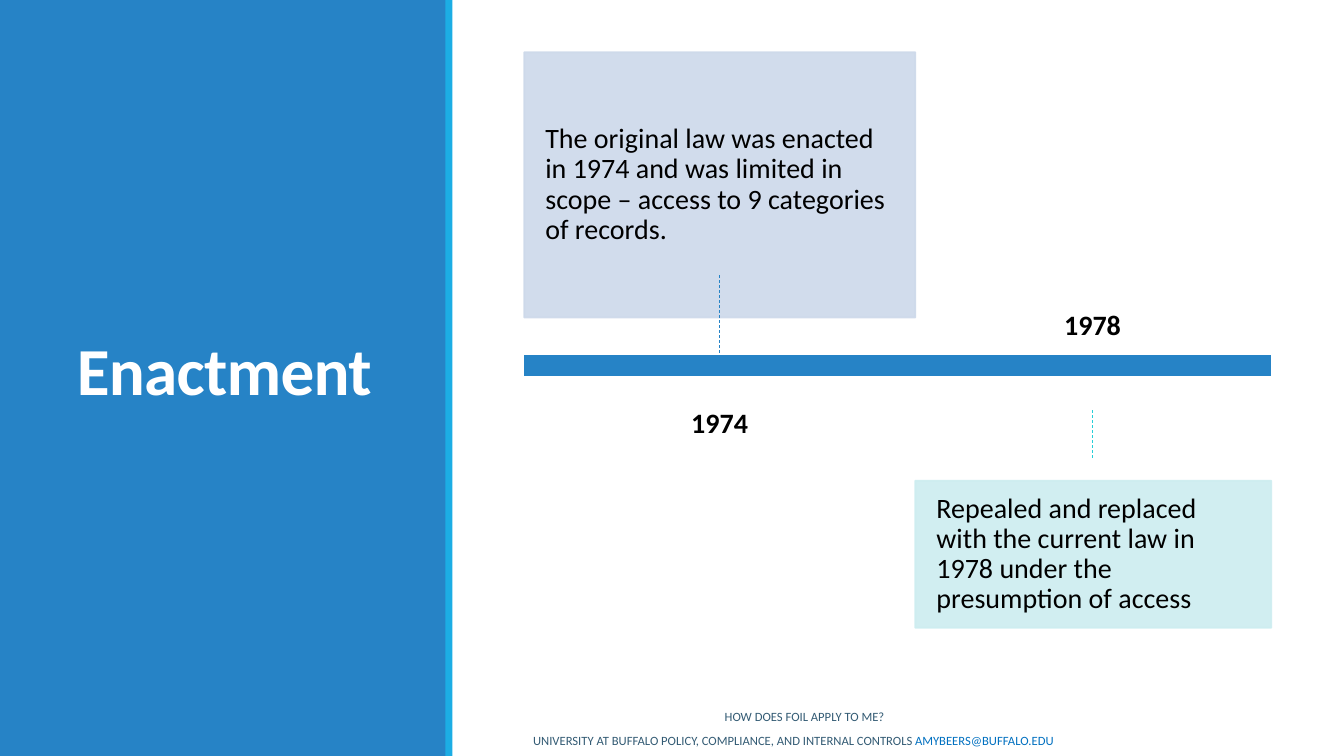
from lxml import etree
from pptx import Presentation
from pptx.dml.color import RGBColor
from pptx.enum.dml import MSO_LINE
from pptx.enum.shapes import MSO_CONNECTOR, MSO_SHAPE
from pptx.enum.text import MSO_ANCHOR, PP_ALIGN
from pptx.oxml.ns import qn
from pptx.util import Pt

RECTANGLE = MSO_SHAPE.RECTANGLE
STRAIGHT = MSO_CONNECTOR.STRAIGHT
DASH = MSO_LINE.DASH
LEFT, CENTER = PP_ALIGN.LEFT, PP_ALIGN.CENTER
TOP, MIDDLE, BOTTOM = MSO_ANCHOR.TOP, MSO_ANCHOR.MIDDLE, MSO_ANCHOR.BOTTOM

WHITE = RGBColor(0xFF, 0xFF, 0xFF)
BLACK = RGBColor(0x00, 0x00, 0x00)
BLUE = RGBColor(0x26, 0x83, 0xC6)
SKY = RGBColor(0x1C, 0xAD, 0xE4)
TURQUOISE = RGBColor(0x27, 0xCE, 0xD7)
PALE_BLUE = RGBColor(0xCD, 0xD9, 0xEA)
PALE_TURQUOISE = RGBColor(0xCD, 0xED, 0xF0)
SLATE = RGBColor(0x33, 0x5B, 0x74)
LINK_BLUE = RGBColor(0x00, 0x70, 0xC0)


class SlideBuilder:
    font_name = "Calibri"
    outline_width = Pt(1.25)
    card_margin = 15.12

    def __init__(self, slide):
        self.slide = slide

    def add_span(self, para, text, size=20, color=BLACK, bold=False, tracking=0):
        """Append a formatted span; tracking is in points."""
        span = para.add_run()
        span.text = text
        span.font.name = self.font_name
        span.font.size = Pt(size)
        span.font.bold = bold
        span.font.color.rgb = color
        if tracking:
            span.font._element.set("spc", str(round(tracking * 100)))

    def frame(self, box, margins, anchor):
        """Prepare the text frame of a box and return it."""
        frame = box.text_frame
        frame.word_wrap = True
        frame.vertical_anchor = anchor
        frame.margin_left = frame.margin_right = Pt(margins[0])
        frame.margin_top = frame.margin_bottom = Pt(margins[1])
        return frame

    def rectangle(self, left, top, width, height, fill, outline=None, opacity=100):
        box = self.slide.shapes.add_shape(
            RECTANGLE, Pt(left), Pt(top), Pt(width), Pt(height))
        box.shadow.inherit = False
        box.fill.solid()
        box.fill.fore_color.rgb = fill
        if outline is None:
            box.line.fill.background()
        else:
            box.line.color.rgb = outline
            box.line.width = self.outline_width
        if opacity < 100:
            for color in box.element.spPr.iter(qn("a:srgbClr")):
                etree.SubElement(color, qn("a:alpha")).set("val", str(opacity * 1000))
        return box

    def text_box(self, left, top, width, height, margins=(7.2, 3.6), anchor=MIDDLE):
        box = self.slide.shapes.add_textbox(
            Pt(left), Pt(top), Pt(width), Pt(height))
        return self.frame(box, margins, anchor)

    def title(self, left, top, width, height, text):
        para = self.text_box(left, top, width, height).paragraphs[0]
        para.alignment = CENTER
        para.line_spacing = 0.85
        self.add_span(para, text, size=48, color=WHITE, bold=True, tracking=-0.5)

    def year(self, left, top, width, height, text, anchor):
        para = self.text_box(left, top, width, height, (0, 0), anchor).paragraphs[0]
        para.alignment = CENTER
        para.line_spacing = 0.9
        self.add_span(para, text, bold=True)

    def card(self, left, top, width, height, text, color):
        box = self.rectangle(left, top, width, height, color, color, opacity=90)
        margins = (self.card_margin, self.card_margin)
        para = self.frame(box, margins, MIDDLE).paragraphs[0]
        para.alignment = LEFT
        para.line_spacing = 0.9
        self.add_span(para, text)

    def dashed_line(self, x, top, bottom, color):
        line = self.slide.shapes.add_connector(
            STRAIGHT, Pt(x), Pt(top), Pt(x), Pt(bottom))
        line.line.color.rgb = color
        line.line.width = Pt(0.5)
        line.line.dash_style = DASH
        etree.SubElement(line.element.spPr, qn("a:effectLst"))

    def footer(self, left, top, width, height, heading, office, email):
        frame = self.text_box(left, top, width, height)
        first, second = frame.paragraphs[0], frame.add_paragraph()
        first.alignment, second.alignment = CENTER, LEFT
        first.space_after = second.space_after = Pt(6)
        self.add_span(first, heading, size=9, color=SLATE)
        self.add_span(second, office, size=9, color=SLATE)
        self.add_span(second, email, size=9, color=LINK_BLUE)


def main():
    deck = Presentation()
    deck.slide_width, deck.slide_height = Pt(960), Pt(540)
    page = SlideBuilder(deck.slides.add_slide(deck.slide_layouts[6]))

    page.rectangle(0, 0, 319, 540, BLUE)
    page.title(38.9, 41, 242.6, 454.3, "Enactment")
    page.rectangle(318.2, 0, 5, 540, SKY)
    page.footer(373.7, 504, 401.8, 33.1, "HOW DOES FOIL APPLY TO ME?",
                "UNIVERSITY AT BUFFALO POLICY, COMPLIANCE, AND INTERNAL CONTROLS ",
                "AMYBEERS@BUFFALO.EDU")

    page.year(425.5, 292.3, 177.1, 46.8, "1974", TOP)
    page.rectangle(373.7, 252.7, 535, 16.6, BLUE, WHITE)
    page.card(374.4, 37.4, 279.4, 189.4,
              "The original law was enacted in 1974 and was limited in scope "
              "– access to 9 categories of records.", PALE_BLUE)
    page.dashed_line(514.1, 196.6, 267.1, BLUE)
    page.year(691.9, 221.8, 177.1, 22.3, "1978", BOTTOM)
    page.card(653.8, 343.4, 254.2, 105.1,
              "Repealed and replaced with the current law in 1978 under the "
              "presumption of access", PALE_TURQUOISE)
    page.dashed_line(780.5, 293, 326.9, TURQUOISE)

    deck.save("out.pptx")


if __name__ == "__main__":
    main()
